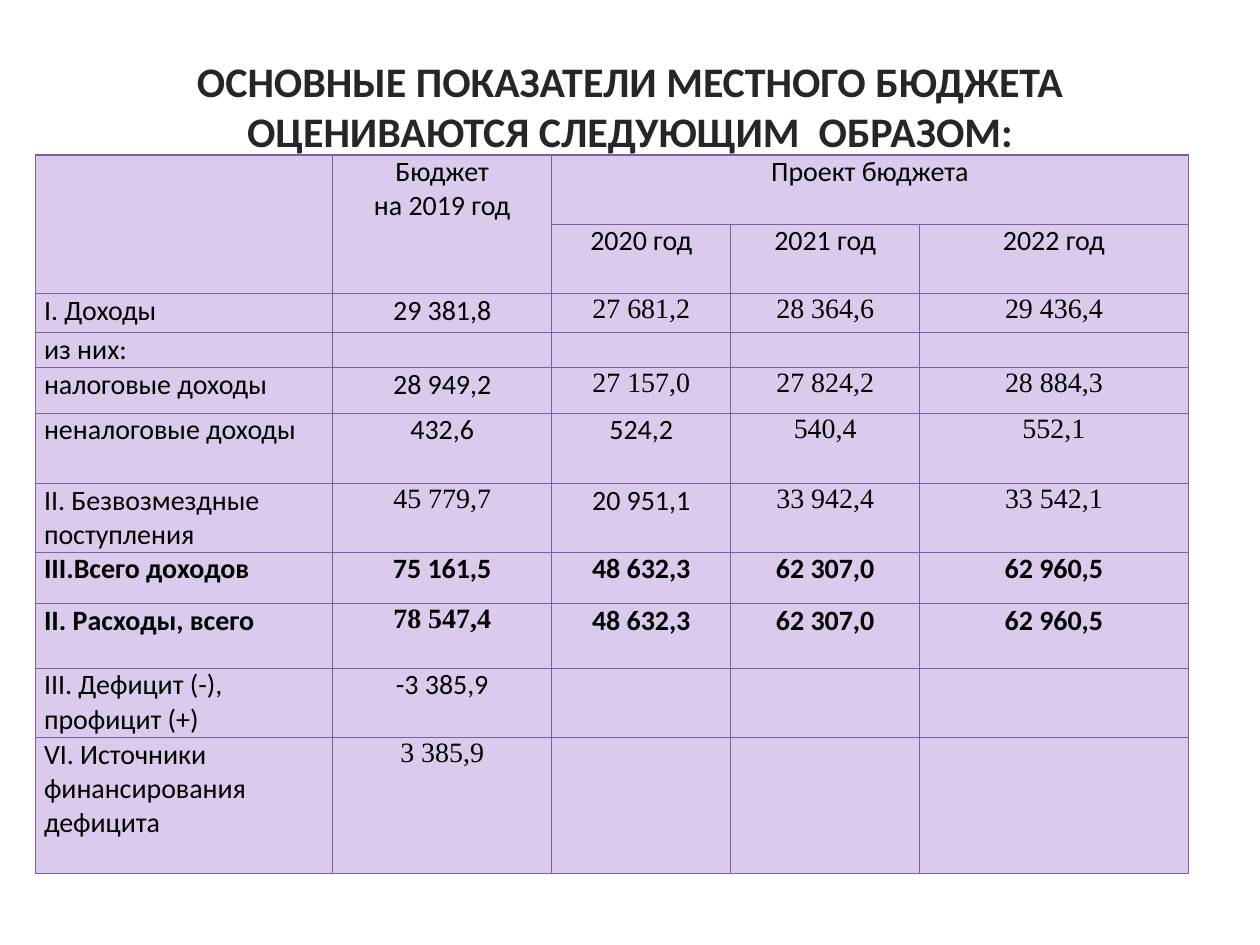
from dataclasses import dataclass

from lxml import etree
from pptx import Presentation
from pptx.dml.color import RGBColor
from pptx.enum.text import MSO_ANCHOR, PP_ALIGN
from pptx.oxml.ns import qn
from pptx.util import Inches, Pt

LEFT, CENTER, JUSTIFY = PP_ALIGN.LEFT, PP_ALIGN.CENTER, PP_ALIGN.JUSTIFY
TOP, MIDDLE = MSO_ANCHOR.TOP, MSO_ANCHOR.MIDDLE


@dataclass(frozen=True)
class Theme:
    font: str = "Calibri"
    serif: str = "Times New Roman"
    title_color: str = "262626"
    title_outline: str = "5E457C"
    text: str = "000000"
    fill: str = "DACAEC"
    border: str = "7D60A0"
    title_size: int = 24
    body_size: int = 16
    title_outline_width: float = 0.71
    border_width: float = 0.75


THEME = Theme()
TITLE = "ОСНОВНЫЕ ПОКАЗАТЕЛИ МЕСТНОГО БЮДЖЕТА ОЦЕНИВАЮТСЯ СЛЕДУЮЩИМ  ОБРАЗОМ:"
COL_WIDTHS = [2.36, 1.74, 1.42, 1.5, 2.13]
ROW_HEIGHTS = [0.55, 0.55, 0.31, 0.28, 0.36, 0.56, 0.54, 0.41, 0.51, 0.55, 1.08]
ROWS = [
    ["", "Бюджет\nна 2019 год", "Проект бюджета", "", ""],
    ["", "", "2020 год", "2021 год", "2022 год"],
    ["I. Доходы", "29 381,8", "27 681,2", "28 364,6", "29 436,4"],
    ["из них:", "", "", "", ""],
    ["налоговые доходы", "28 949,2", "27 157,0", "27 824,2", "28 884,3"],
    ["неналоговые доходы", "432,6", "524,2", "540,4", "552,1"],
    ["II. Безвозмездные поступления", "45 779,7", "20 951,1", "33 942,4", "33 542,1"],
    ["III.Всего доходов", "75 161,5", "48 632,3", "62 307,0", "62 960,5"],
    ["II. Расходы, всего", "78 547,4", "48 632,3", "62 307,0", "62 960,5"],
    ["III. Дефицит (-), профицит (+)", "-3 385,9", "", "", ""],
    ["VI. Источники финансирования дефицита", "3 385,9", "", "", ""],
]
MERGES = [((0, 0), (1, 0)), ((0, 1), (1, 1)), ((0, 2), (0, 4))]
SERIF_COLS = {2: (2, 3, 4), 4: (2, 3, 4), 5: (3, 4), 6: (1, 3, 4), 8: (1,), 10: (1,)}
BOLD_ROWS = (7, 8)
INCOME_ROW = 2


def make_line(tag, color, width):
    ln = etree.Element(qn(tag), w=str(Pt(width)))
    fill = etree.SubElement(ln, qn("a:solidFill"))
    etree.SubElement(fill, qn("a:srgbClr"), val=color)
    return ln


def format_run(r, size, color, font, bold):
    r.font.size = Pt(size)
    r.font.color.rgb = RGBColor.from_string(color)
    r.font.name = font
    r.font.bold = bold


def add_title(s):
    title = s.shapes.title
    title.left, title.top = Inches(0.5), Inches(0.13)
    title.width, title.height = Inches(9), Inches(1.42)
    tf = title.text_frame
    tf.text = TITLE
    tf.word_wrap = True
    tf.vertical_anchor = MIDDLE
    p = tf.paragraphs[0]
    p.alignment = CENTER
    r = p.runs[0]
    format_run(r, THEME.title_size, THEME.title_color, THEME.font, True)
    outline = make_line("a:ln", THEME.title_outline, THEME.title_outline_width)
    r.font._element.insert(0, outline)


def style_cell(cell):
    cell.margin_left = cell.margin_right = Inches(0.07)
    cell.margin_top = cell.margin_bottom = 0
    cell.vertical_anchor = TOP
    tcPr = cell._tc.get_or_add_tcPr()
    for side in "LRTB":
        tcPr.append(make_line(f"a:ln{side}", THEME.border, THEME.border_width))
    cell.fill.solid()
    cell.fill.fore_color.rgb = RGBColor.from_string(THEME.fill)


def fill_cell(cell, text, align, font, bold):
    cell.text_frame.text = text
    for p in cell.text_frame.paragraphs:
        p.alignment = align
        for r in p.runs:
            format_run(r, THEME.body_size, THEME.text, font, bold)
        if not p.runs:
            etree.SubElement(p._p, qn("a:endParaRPr"), sz=str(THEME.body_size * 100))


def add_budget_table(s):
    frame = s.shapes.add_table(len(ROWS), len(COL_WIDTHS), Inches(0.28), Inches(1.23),
                               Inches(sum(COL_WIDTHS)), Inches(sum(ROW_HEIGHTS)))
    table = frame.table
    for col, width in zip(table.columns, COL_WIDTHS):
        col.width = Inches(width)
    for row, height in zip(table.rows, ROW_HEIGHTS):
        row.height = Inches(height)
    for i, values in enumerate(ROWS):
        label_align = JUSTIFY if i == INCOME_ROW else LEFT
        for j, text in enumerate(values):
            cell = table.cell(i, j)
            font = THEME.serif if j in SERIF_COLS.get(i, ()) else THEME.font
            style_cell(cell)
            fill_cell(cell, text, CENTER if j else label_align, font, i in BOLD_ROWS)
    for first, last in MERGES:
        table.cell(*first).merge(table.cell(*last))


def main():
    prs = Presentation()
    prs.slide_width, prs.slide_height = Inches(10), Inches(7.5)
    s = prs.slides.add_slide(prs.slide_layouts[5])
    add_title(s)
    add_budget_table(s)
    prs.save("out.pptx")


if __name__ == "__main__":
    main()
